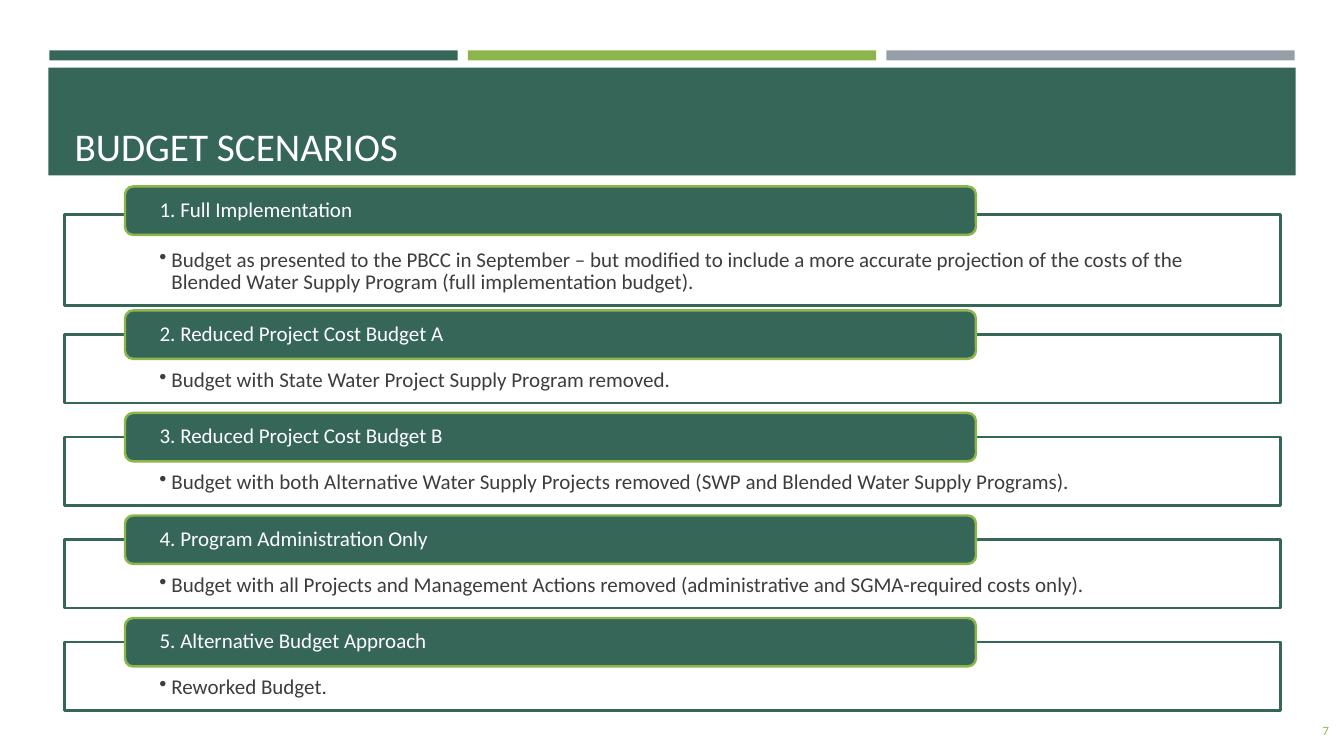
"""Build the budget scenarios slide."""
from lxml.etree import SubElement
from pptx import Presentation
from pptx.dml.color import RGBColor
from pptx.enum.shapes import MSO_SHAPE as Shape
from pptx.enum.text import MSO_ANCHOR as Anchor, PP_ALIGN as Align
from pptx.oxml.ns import qn
from pptx.util import Inches, Pt

TITLE = "BUDGET SCENARIOS"
NUMBER = "7"
ITEMS = [
    ("1. Full Implementation",
     "Budget as presented to the PBCC in September – but modified to include "
     "a more accurate projection of the costs of the Blended Water Supply "
     "Program (full implementation budget)."),
    ("2. Reduced Project Cost Budget A",
     "Budget with State Water Project Supply Program removed."),
    ("3. Reduced Project Cost Budget B",
     "Budget with both Alternative Water Supply Projects removed "
     "(SWP and Blended Water Supply Programs)."),
    ("4. Program Administration Only",
     "Budget with all Projects and Management Actions removed "
     "(administrative and SGMA-required costs only)."),
    ("5. Alternative Budget Approach", "Reworked Budget."),
]
COLORS = {"green": "366658", "lime": "8CB64A", "gray": "969FA7",
          "white": "FFFFFF", "ink": "3D3D3D"}
WIDE, HIGH = 13.33, 7.5
FONT = "Calibri"
BAR_X, BAR_W, BAR_STEP = 0.49, 4.05, 4.15
BOX_X, BOX_W = 0.64, 12.06
TAB_X, TAB_W, TAB_H = 1.24, 8.44, 0.48
FIRST = (1.85, 0.28, 0.9)
NEXT_Y, STEP, DROP, BOX_H = 3.08, 1.017, 0.24, 0.68


def color(name):
    return RGBColor.from_string(COLORS[name])


def add_box(slide, kind, spot, fill, line=None):
    box = slide.shapes.add_shape(kind, *map(Inches, spot))
    box.shadow.inherit = False
    box.fill.solid()
    box.fill.fore_color.rgb = color(fill)
    if line:
        box.line.color.rgb = color(line)
        box.line.width = Pt(1.75)
    else:
        box.line.fill.background()
    return box


def set_text(shape, text, size, ink, anchor, pads, align=Align.LEFT):
    frame = shape.text_frame
    frame.text = text
    frame.word_wrap = True
    frame.vertical_anchor = anchor
    (frame.margin_left, frame.margin_top,
     frame.margin_right, frame.margin_bottom) = map(Inches, pads)
    para = frame.paragraphs[0]
    para.alignment = align
    font = para.runs[0].font
    font.name, font.size = FONT, Pt(size)
    font.color.rgb = color(ink)
    return para


def add_bullet(para):
    props = para._p.get_or_add_pPr()
    props.set("marL", str(Inches(0.12)))
    props.set("indent", str(-Inches(0.12)))
    SubElement(props, qn("a:buChar"), char="•")


def add_item(slide, row, head, body):
    top, drop, high = FIRST if row == 0 else (
        NEXT_Y + (row - 1) * STEP, DROP, BOX_H)
    box = add_box(slide, Shape.RECTANGLE, (BOX_X, top + drop, BOX_W, high),
                  "white", "green")
    para = set_text(box, body, 15, "ink", Anchor.TOP, (0.94, 0.34, 0.94, 0.12))
    add_bullet(para)
    para.line_spacing = 0.9
    tab = add_box(slide, Shape.ROUNDED_RECTANGLE, (TAB_X, top, TAB_W, TAB_H),
                  "green", "lime")
    para = set_text(tab, head, 15, "white", Anchor.MIDDLE, (0.32, 0, 0.32, 0))
    para.line_spacing = 0.9


def add_title(slide):
    for col, fill in enumerate(("green", "lime", "gray")):
        add_box(slide, Shape.RECTANGLE,
                (BAR_X + col * BAR_STEP, 0.5, BAR_W, 0.1), fill)
    add_box(slide, Shape.RECTANGLE, (0.48, 0.67, 12.37, 1.07), "green")
    title = slide.shapes.title
    title.left, title.top, title.width, title.height = map(
        Inches, (BOX_X, 0.81, BOX_W, 0.92))
    set_text(title, TITLE, 28, "white", Anchor.BOTTOM, (0.1, 0.05, 0.1, 0.05))
    title.element.getparent().append(title.element)


def main():
    deck = Presentation()
    deck.slide_width, deck.slide_height = Inches(WIDE), Inches(HIGH)
    slide = deck.slides.add_slide(deck.slide_layouts[5])
    add_title(slide)
    for row, (head, body) in enumerate(ITEMS):
        add_item(slide, row, head, body)
    page = slide.shapes.add_textbox(*map(Inches, (12.7, 7.05, 0.58, 0.4)))
    set_text(page, NUMBER, 9, "lime", Anchor.MIDDLE, (0.1, 0.05, 0.1, 0.05),
             Align.RIGHT)
    deck.save("out.pptx")


if __name__ == "__main__":
    main()
